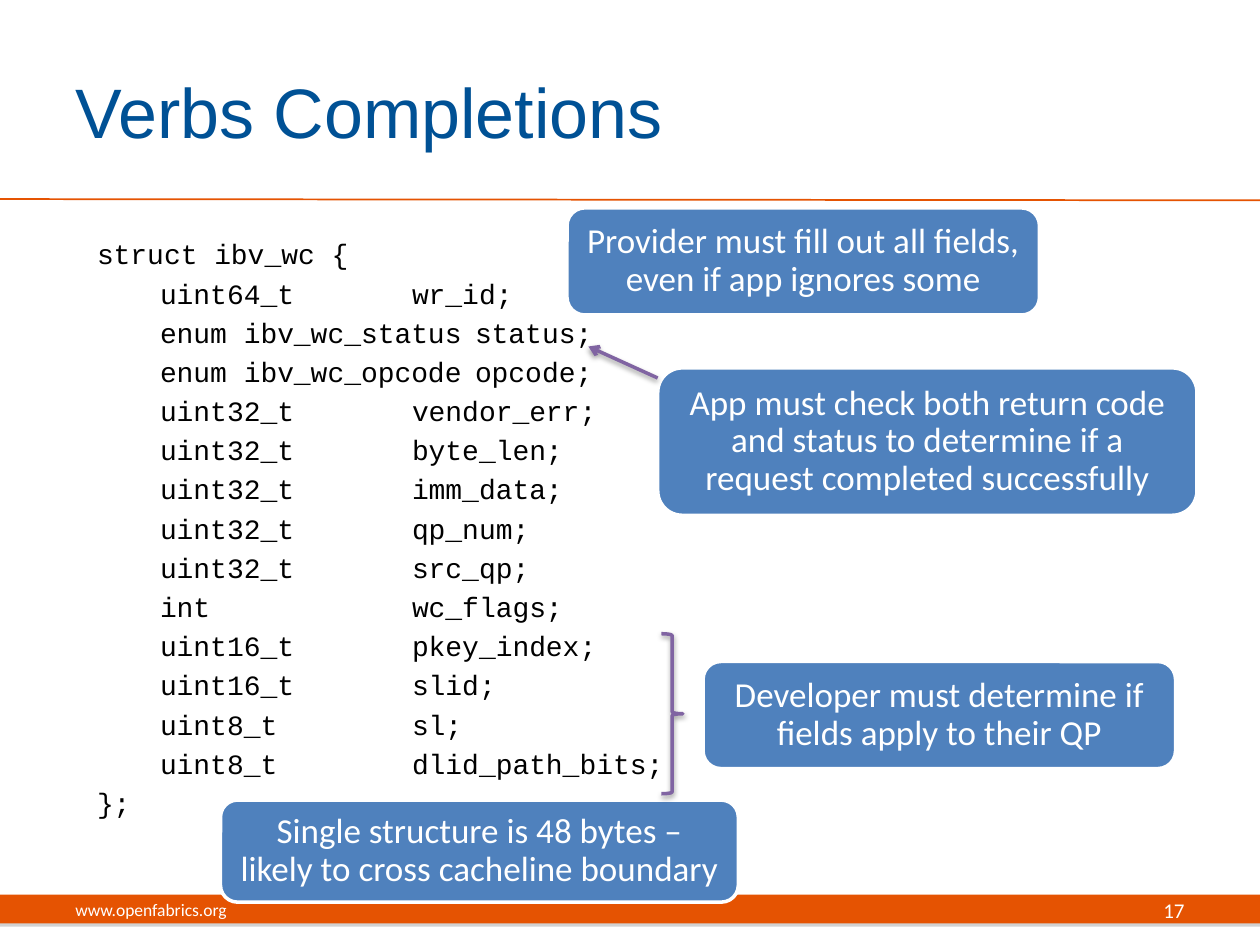
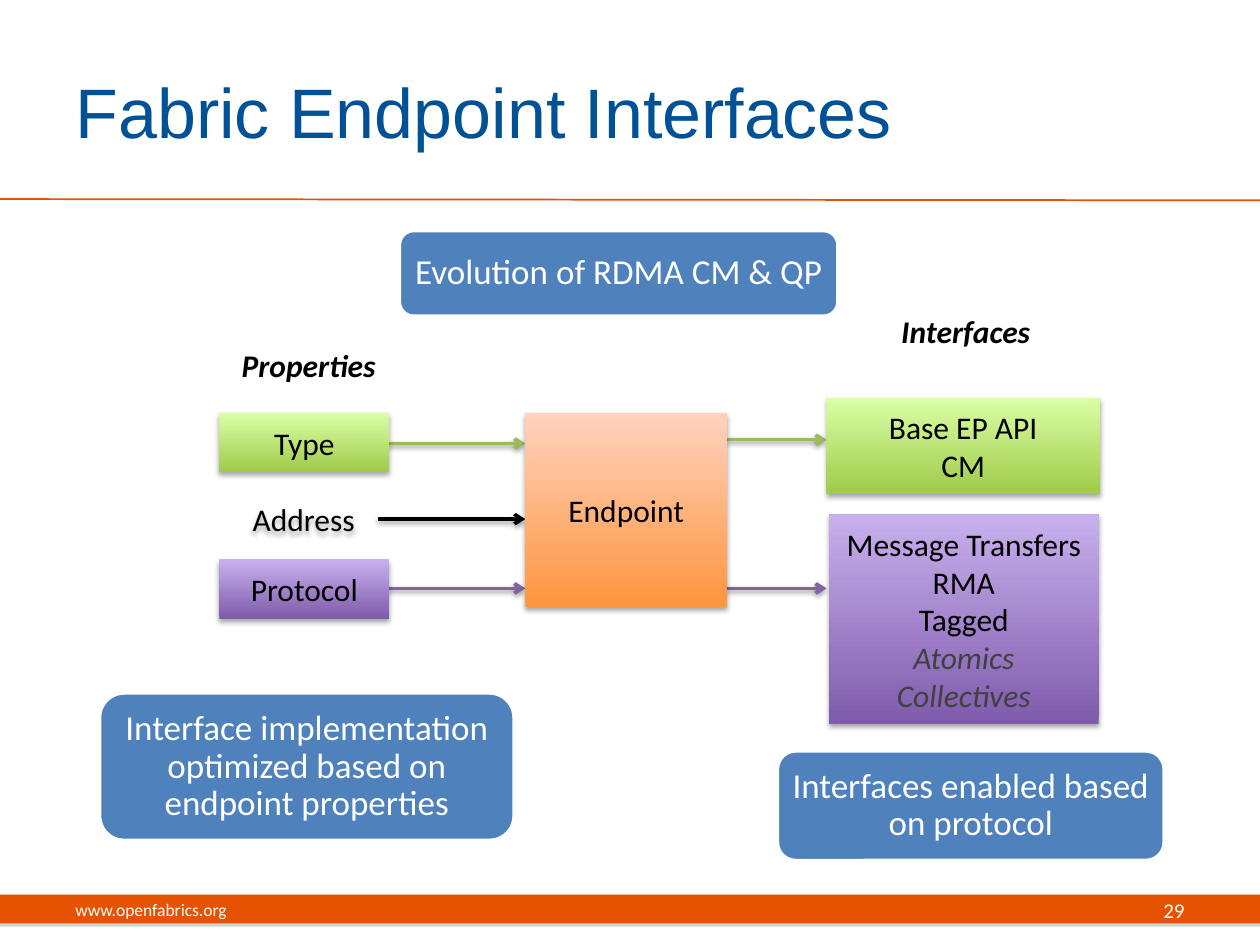
from math import ceil

from lxml.etree import SubElement
from pptx import Presentation
from pptx.dml.color import RGBColor
from pptx.enum.shapes import MSO_CONNECTOR, MSO_SHAPE
from pptx.enum.text import MSO_ANCHOR, MSO_AUTO_SIZE, PP_ALIGN
from pptx.oxml.ns import qn
from pptx.util import Inches, Pt

# Shared look
WIDTH, HEIGHT = 10, 7.5
COLORS = {
    "title": "005195", "band": "E55302", "callout": "4F81BD",
    "white": "FFFFFF", "black": "000000", "muted": "404040",
    "band shadow": "808080", "green": "9BBB59", "purple": "8064A2",
}
GRADIENTS = {  # bottom colour, top colour
    "green": ("A0CA4A", "DAFFA5"),
    "purple": ("7F5BAB", "C8B0ED"),
    "orange": ("FF953E", "FFD2BD"),
}
SITE = "www.openfabrics.org"
TITLE_AREA = (0.5, 0.25, 8.17, 1.25)
FOOTER_TOP, FOOTER_HEIGHT = 7.02, 0.4

# Slide 1 content
COMPLETION_FIELDS = [
    ("uint64_t", "wr_id"),
    ("enum ibv_wc_status", "status"),
    ("enum ibv_wc_opcode", "opcode"),
    ("uint32_t", "vendor_err"),
    ("uint32_t", "byte_len"),
    ("uint32_t", "imm_data"),
    ("uint32_t", "qp_num"),
    ("uint32_t", "src_qp"),
    ("int", "wc_flags"),
    ("uint16_t", "pkey_index"),
    ("uint16_t", "slid"),
    ("uint8_t", "sl"),
    ("uint8_t", "dlid_path_bits"),
]
CODE_AREA = (0.67, 1.83, 9, 5.08)
CODE_SIZE = 16
TAB_STEP, NAME_COLUMN = 0.5, 2.5
FIELD_BRACE = (5.25, 5.03, 0.17, 1.27)
STATUS_ARROW = ((5.22, 3), (4.67, 2.75))
COMPLETION_CALLOUTS = [
    ("Provider must fill out all fields, even if app ignores some", (4.5, 1.65, 3.75, 0.85)),
    ("Developer must determine if fields apply to their QP", (5.58, 5.25, 3.75, 0.85)),
    ("Single structure is 48 bytes –\vlikely to cross cacheline boundary",
     (1.75, 6.35, 4.11, 0.81)),
    ("App must check both return code and status to determine if a request "
     "completed successfully", (5.22, 2.92, 4.28, 1.17)),
]

# Slide 2 content
ENDPOINT_BOXES = [
    (["Type"], "green", (1.74, 3.28, 1.35, 0.47)),
    (["Protocol"], "purple", (1.74, 4.44, 1.35, 0.47)),
    (["Base EP API", "CM"], "green", (6.56, 3.16, 2.17, 0.76)),
    (["Message Transfers", "RMA", "Tagged", "Atomics", "Collectives"], "purple",
     (6.58, 4.08, 2.14, 1.67)),
    (["Endpoint"], "orange", (4.17, 3.28, 1.6, 1.54)),
]
FUTURE_INTERFACES = {"Atomics", "Collectives"}
ENDPOINT_HEADINGS = [
    ("Properties", (1.65, 2.68, 1.6, 0.43)),
    ("Interfaces", (6.58, 2.42, 2.17, 0.41)),
]
ADDRESS_AREA = (1.82, 3.91, 1.18, 0.42)
ENDPOINT_ARROWS = [  # start, end, height on the slide, colour
    (3, 4.17, 4.12, "black"),
    (3.08, 4.17, 3.52, "green"),
    (3.08, 4.17, 4.67, "purple"),
    (5.77, 6.56, 3.49, "green"),
    (5.77, 6.56, 4.67, "purple"),
]
ENDPOINT_CALLOUTS = [
    ("Evolution of RDMA CM & QP", (3.17, 1.83, 3.48, 0.68)),
    ("Interfaces enabled based on protocol", (6.17, 5.96, 3.07, 0.87)),
    ("Interface implementation optimized based on endpoint properties",
     (0.79, 5.5, 3.29, 1.17)),
]


def rgb(name):
    return RGBColor.from_string(COLORS[name])


def inches(values):
    return [Inches(value) for value in values]


def format_paragraph(para, size, color="black", font="Calibri", align=PP_ALIGN.LEFT,
                     bold=False, italic=False):
    para.alignment = align
    for span in para.runs:
        span.font.name, span.font.size = font, Pt(size)
        span.font.color.rgb = rgb(color)
        span.font.bold, span.font.italic = bold, italic


def write(shape, lines, size, **style):
    frame = shape.text_frame
    frame.word_wrap = True
    frame.vertical_anchor = MSO_ANCHOR.MIDDLE
    frame.text = "\n".join(lines)
    for para in frame.paragraphs:
        format_paragraph(para, size, **style)


def add_shadow(shape, color="black", alpha=35, blur=3.1, distance=1.8):
    properties = shape.element.spPr
    effects = properties.find(qn("a:effectLst"))
    if effects is None:
        effects = SubElement(properties, qn("a:effectLst"))
    shadow = SubElement(effects, qn("a:outerShdw"), blurRad=str(Pt(blur)),
                        dist=str(Pt(distance)), dir="5400000", rotWithShape="0")
    tint = SubElement(shadow, qn("a:srgbClr"), val=COLORS[color])
    SubElement(tint, qn("a:alpha"), val=str(alpha * 1000))


def add_shape(page, kind, area):
    shape = page.shapes.add_shape(kind, *inches(area))
    shape.shadow.inherit = False
    shape.line.fill.background()
    return shape


def add_line(page, start, end, color, width):
    line = page.shapes.add_connector(MSO_CONNECTOR.STRAIGHT, *inches(start + end))
    line.line.color.rgb = rgb(color)
    line.line.width = Pt(width)
    SubElement(line.element.spPr, qn("a:effectLst"))
    return line


def add_arrow(page, start, end, color):
    arrow = add_line(page, start, end, color, 2)
    SubElement(arrow.line._get_or_add_ln(), qn("a:tailEnd"), type="arrow")
    add_shadow(arrow, alpha=38, distance=1.6)


def add_label(page, text, area, size, **style):
    label = page.shapes.add_textbox(*inches(area))
    write(label, [text], size, **style)
    return label


def add_callouts(page, callouts):
    for text, area in callouts:
        box = add_shape(page, MSO_SHAPE.ROUNDED_RECTANGLE, area)
        box.fill.solid()
        box.fill.fore_color.rgb = rgb("callout")
        box.line.color.rgb = rgb("white")
        box.line.width = Pt(2)
        write(box, [text], 20, color="white", align=PP_ALIGN.CENTER)
        frame = box.text_frame
        frame.margin_left = frame.margin_right = Inches(0.07)
        frame.paragraphs[0].line_spacing = 0.9


def add_master_parts(deck, page):
    """Draw the band and the title rule, then hand them to the slide master."""
    band = add_shape(page, MSO_SHAPE.RECTANGLE, (0, 7.1, WIDTH, 0.23))
    band.fill.solid()
    band.fill.fore_color.rgb = rgb("band")
    add_shadow(band, "band shadow", blur=0)
    rule = add_line(page, (0, 1.58), (WIDTH, 1.59), "band", 1)
    for part in (band, rule):
        deck.slide_master.shapes.element.append(part.element)


def add_page(deck, layout, title, number):
    page = deck.slides.add_slide(deck.slide_layouts[layout])
    heading = page.shapes.title
    heading.left, heading.top, heading.width, heading.height = inches(TITLE_AREA)
    write(heading, [title], 40, color="title", font="Arial")
    heading.text_frame.auto_size = MSO_AUTO_SIZE.NONE
    add_label(page, SITE, (0.5, FOOTER_TOP, 3.17, FOOTER_HEIGHT), 10, color="white")
    add_label(page, str(number), (7.17, FOOTER_TOP, 2.33, FOOTER_HEIGHT), 12,
              color="white", align=PP_ALIGN.RIGHT)
    return page


def field_line(kind, name):
    """Indent a field and tab its name to the name column."""
    kind_end = TAB_STEP + len(kind) * CODE_SIZE * 0.6 / 72
    tabs = max(1, ceil((NAME_COLUMN - kind_end) / TAB_STEP))
    return "\t" + kind + "\t" * tabs + name + ";"


def fill_code(body):
    body.left, body.top, body.width, body.height = inches(CODE_AREA)
    frame = body.text_frame
    frame.auto_size = MSO_AUTO_SIZE.NONE
    lines = ["struct ibv_wc {", *(field_line(*field) for field in COMPLETION_FIELDS), "};"]
    frame.text = "\n".join(lines)
    for index, para in enumerate(frame.paragraphs):
        properties = para._p.get_or_add_pPr()
        properties.set("marL", "0")
        properties.set("indent", "0")
        SubElement(properties, qn("a:buNone"))
        tabs = SubElement(properties, qn("a:tabLst"))
        for stop in range(1, 9):
            SubElement(tabs, qn("a:tab"), pos=str(Inches(stop * TAB_STEP)), algn="l")
        para.space_before = Pt(0.2 * CODE_SIZE if index else 0)
        format_paragraph(para, CODE_SIZE, font="Courier New")


def build_completions(deck):
    page = add_page(deck, 1, "Verbs Completions", 17)
    add_master_parts(deck, page)
    fill_code(page.placeholders[1])
    add_callouts(page, COMPLETION_CALLOUTS)
    brace = add_shape(page, MSO_SHAPE.RIGHT_BRACE, FIELD_BRACE)
    brace.fill.background()
    brace.line.color.rgb = rgb("purple")
    brace.line.width = Pt(2)
    add_shadow(brace, alpha=38, distance=1.6)
    add_arrow(page, *STATUS_ARROW, "purple")


def build_endpoint(deck):
    page = add_page(deck, 5, "Fabric Endpoint Interfaces", 29)
    for start, end, height, color in ENDPOINT_ARROWS:
        add_arrow(page, (start, height), (end, height), color)
    for lines, gradient, area in ENDPOINT_BOXES:
        box = add_shape(page, MSO_SHAPE.RECTANGLE, area)
        box.fill.gradient()
        box.fill.gradient_angle = 90
        for stop, position, color in zip(box.fill.gradient_stops, (0, 1), GRADIENTS[gradient]):
            stop.position = position
            stop.color.rgb = RGBColor.from_string(color)
        add_shadow(box)
        write(box, lines, 18, align=PP_ALIGN.CENTER)
        for para in box.text_frame.paragraphs:
            if para.text in FUTURE_INTERFACES:
                format_paragraph(para, 18, "muted", align=PP_ALIGN.CENTER, italic=True)
    for text, area in ENDPOINT_HEADINGS:
        add_label(page, text, area, 18, align=PP_ALIGN.CENTER, bold=True, italic=True)
    address = add_label(page, "Address", ADDRESS_AREA, 18, align=PP_ALIGN.CENTER)
    add_shadow(address)
    add_callouts(page, ENDPOINT_CALLOUTS)


def main():
    deck = Presentation()
    deck.slide_width, deck.slide_height = inches((WIDTH, HEIGHT))
    build_completions(deck)
    build_endpoint(deck)
    deck.save("out.pptx")


if __name__ == "__main__":
    main()
